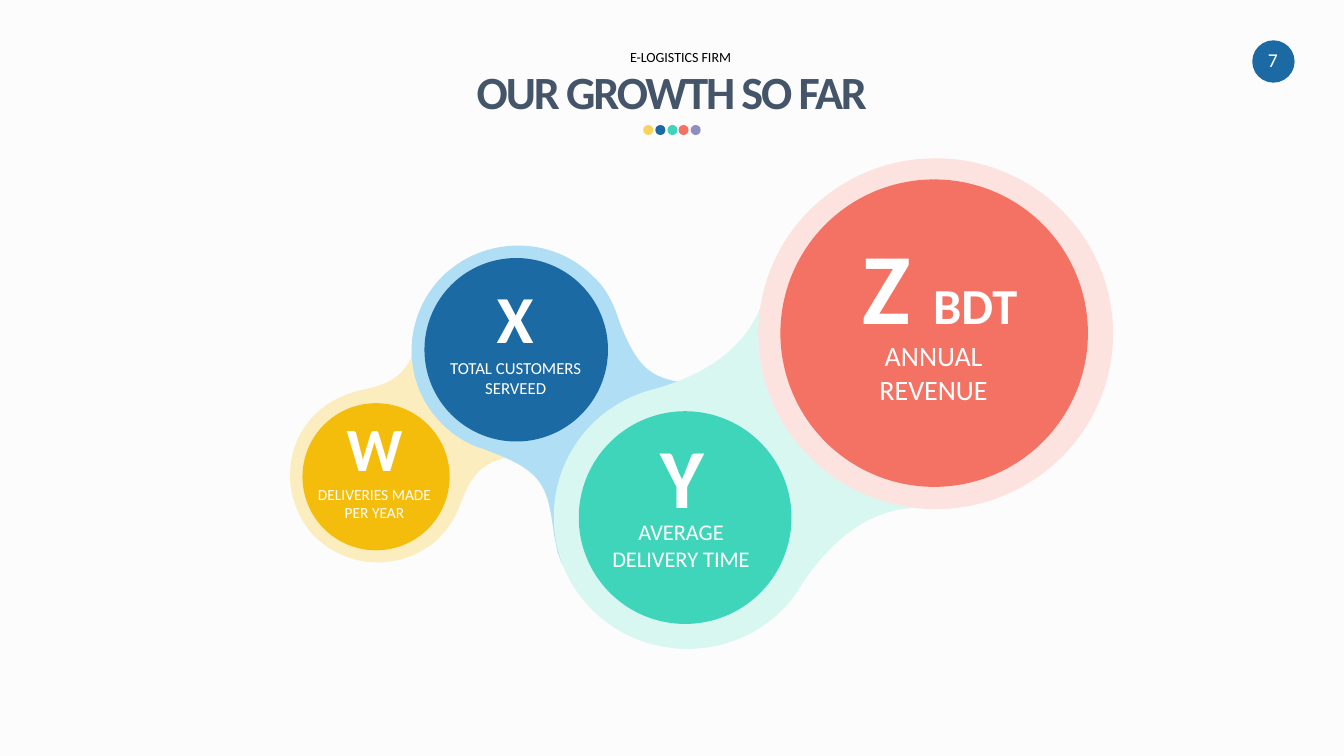
from lxml.etree import SubElement
from pptx import Presentation
from pptx.dml.color import RGBColor
from pptx.enum.shapes import MSO_SHAPE
from pptx.enum.text import MSO_AUTO_SIZE, PP_ALIGN
from pptx.oxml.ns import qn
from pptx.util import Pt

PX = 9144  # EMU in one px, 100 px to the inch

COLORS = {
    "background": "FCFCFC", "white": "FFFFFF", "black": "000000", "slate": "445469",
    "yellow": "F8D35E", "blue": "1B6AA3", "mint": "3FD5BA", "coral": "F47264",
    "violet": "8F8FBF", "gold": "F4BD0C", "pale gold": "FCEDBF",
    "pale blue": "B0DEF4", "pale mint": "D9F7F1", "pale coral": "FDE3E0",
}

# Each halo: colour, start point, then cubic curves (two controls and an end).
HALOS = [
    ("pale gold", (309, 529), [
        (341, 564, 395, 568, 432, 537), (443, 527, 451, 515, 456, 502),
        (467, 472, 477, 456, 515, 452), (460, 447, 416, 401, 416, 345),
        (416, 325, 421, 306, 431, 290), (422, 304, 416, 319, 415, 335),
        (405, 373, 388, 381, 358, 387), (342, 391, 329, 397, 317, 407),
        (281, 438, 278, 492, 309, 529)]),
    ("pale blue", (439, 421), [
        (449, 431, 460, 438, 472, 443), (478, 445, 482, 446, 486, 448),
        (543, 469, 543, 486, 550, 533), (551, 537, 552, 542, 553, 548),
        (555, 552, 556, 557, 558, 561), (554, 549, 552, 536, 552, 523),
        (552, 449, 613, 389, 687, 389), (724, 389, 758, 404, 782, 428),
        (758, 404, 737, 393, 716, 387), (710, 386, 705, 384, 700, 383),
        (653, 376, 637, 377, 615, 321), (613, 316, 612, 311, 610, 307),
        (605, 294, 598, 283, 588, 274), (547, 233, 480, 234, 439, 274),
        (398, 315, 398, 381, 439, 421)]),
    ("pale mint", (575, 591), [
        (619, 649, 702, 661, 761, 618), (774, 608, 785, 597, 793, 583),
        (821, 540, 859, 505, 908, 504), (943, 508, 979, 501, 1011, 484),
        (987, 497, 960, 503, 931, 503), (833, 503, 754, 426, 754, 329),
        (754, 302, 760, 277, 771, 254), (763, 269, 758, 285, 756, 300),
        (740, 347, 696, 373, 649, 386), (630, 391, 616, 398, 602, 408),
        (544, 451, 532, 533, 575, 591)]),
]

# Each circle: colour, left, top, width, height.
CIRCLES = [
    ("pale coral", 752, 157, 352, 348),
    ("coral", 774, 178, 305, 305),
    ("mint", 574, 408, 211, 211),
    ("gold", 300, 400, 146, 146),
    ("blue", 421, 256, 182, 182),
]

# Each metric: figure box, figure runs with sizes, caption box, caption, size.
METRICS = [
    ((312, 402, 119, 84), [("W", 44)],
     (305, 476, 133, 47), "DELIVERIES MADE PER YEAR", 11),
    ((438, 269, 146, 103), [("X", 48)],
     (430, 350, 163, 50), "TOTAL CUSTOMERS SERVEED", 12),
    ((604, 416, 146, 103), [("Y", 60)],
     (594, 509, 163, 64), "AVERAGE DELIVERY TIME", 16),
    ((843, 217, 178, 103), [("Z ", 72), ("BDT", 36)],
     (827, 331, 198, 77), "ANNUAL REVENUE", 20),
]

DOTS = ["yellow", "blue", "mint", "coral", "violet"]


def rgb(color):
    return RGBColor.from_string(COLORS[color])


def paint(shape, color):
    shape.shadow.inherit = False
    shape.fill.solid()
    shape.fill.fore_color.rgb = rgb(color)
    shape.line.fill.background()


def add_circle(shapes, color, *box):
    circle = shapes.add_shape(MSO_SHAPE.OVAL, *(side * PX for side in box))
    paint(circle, color)


def bend_lines(outline):
    """Turn every three straight segments of the outline into one cubic curve."""
    path = next(outline.iter(qn("a:path")))
    lines = path.findall(qn("a:lnTo"))
    for first in range(0, len(lines), 3):
        curve = SubElement(path, qn("a:cubicBezTo"))
        lines[first].addprevious(curve)
        for line in lines[first:first + 3]:
            curve.append(line[0])
            path.remove(line)


def add_halo(shapes, color, start, curves):
    outline = shapes.build_freeform(*start, scale=PX)
    points = [curve[i:i + 2] for curve in curves for i in (0, 2, 4)]
    outline.add_line_segments(points, close=True)
    halo = outline.convert_to_shape()
    bend_lines(halo.element)
    paint(halo, color)


def add_label(shapes, box, runs, color="white", bold=False, spacing=None, **frame_format):
    """Add centred text; runs are (wording, point size) pairs."""
    frame = shapes.add_textbox(*(side * PX for side in box)).text_frame
    settings = {"word_wrap": True, "auto_size": MSO_AUTO_SIZE.SHAPE_TO_FIT_TEXT}
    for name, value in {**settings, **frame_format}.items():
        setattr(frame, name, value)
    paragraph = frame.paragraphs[0]
    paragraph.alignment = PP_ALIGN.CENTER
    for wording, size in runs:
        run = paragraph.add_run()
        run.text = wording
        for name, value in {"name": "Calibri", "size": Pt(size), "bold": bold}.items():
            setattr(run.font, name, value)
        run.font.color.rgb = rgb(color)
        if spacing is not None:
            run._r.get_or_add_rPr().set("spc", str(spacing))


def add_header(shapes):
    add_circle(shapes, "blue", 1242, 40, 42, 42)
    add_label(shapes, (1241, 43, 43, 34), [("7", 14)], word_wrap=False)
    add_label(shapes, (608, 43, 134, 27), [("E-LOGISTICS FIRM", 10)], "black")
    dots = shapes.add_group_shape().shapes
    for index, color in enumerate(DOTS):
        add_circle(dots, color, 638 + round(index * 11.75), 124, 10, 10)
    no_insets = dict.fromkeys(
        ("margin_left", "margin_top", "margin_right", "margin_bottom"), 0)
    add_label(shapes, (470, 63, 393, 56), [("OUR GROWTH SO FAR", 33)], "slate",
              bold=True, spacing=-150, word_wrap=False, **no_insets)


def add_metric(shapes, figure_box, figure, caption_box, caption, caption_size):
    metric = shapes.add_group_shape().shapes
    add_label(metric, figure_box, figure, bold=True, auto_size=MSO_AUTO_SIZE.NONE)
    add_label(metric, caption_box, [(caption, caption_size)])


def main():
    deck = Presentation()
    deck.slide_width, deck.slide_height = 1333 * PX, 750 * PX
    slide = deck.slides.add_slide(deck.slide_layouts[6])
    slide.background.fill.solid()
    slide.background.fill.fore_color.rgb = rgb("background")

    add_header(slide.shapes)
    for halo in HALOS:
        add_halo(slide.shapes, *halo)
    for circle in CIRCLES:
        add_circle(slide.shapes, *circle)
    for metric in METRICS:
        add_metric(slide.shapes, *metric)
    deck.save("out.pptx")


if __name__ == "__main__":
    main()
